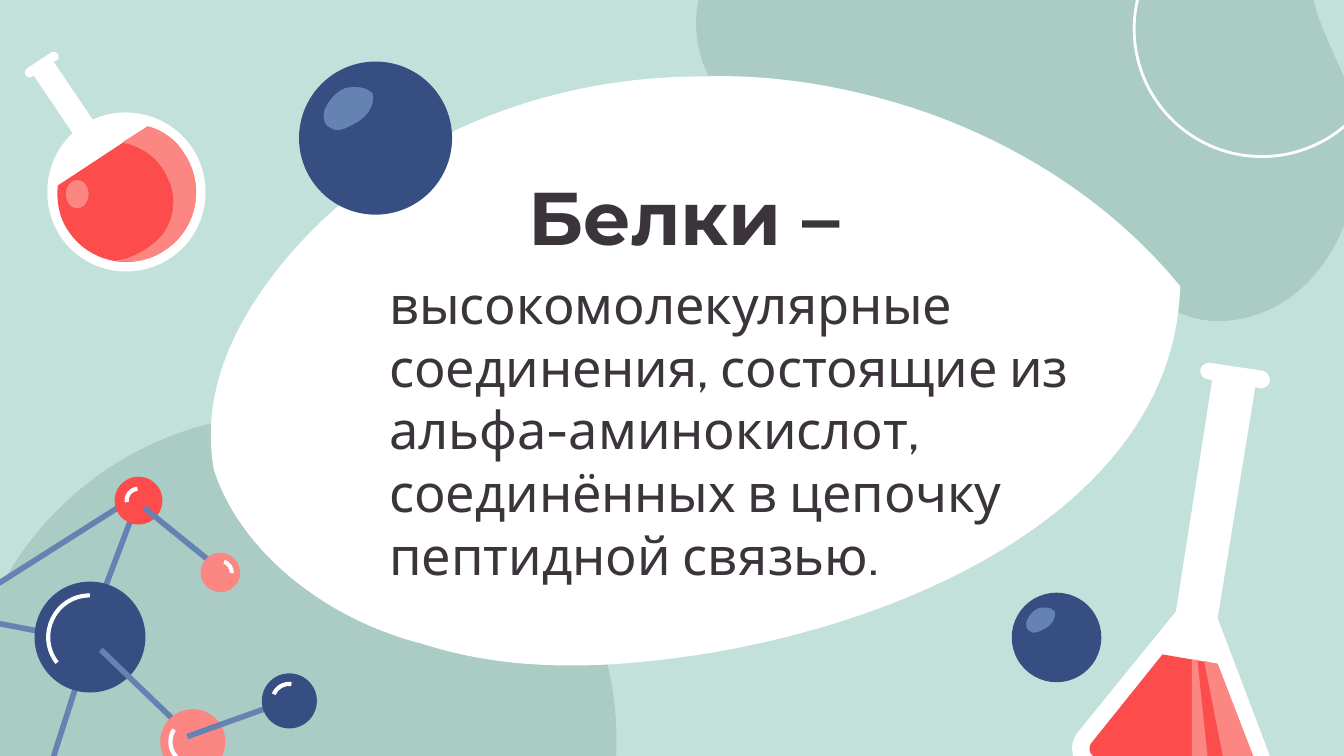
from math import cos, radians, sin, tan

from lxml import etree
from pptx import Presentation
from pptx.dml.color import RGBColor
from pptx.enum.shapes import MSO_CONNECTOR, MSO_SHAPE
from pptx.enum.text import MSO_ANCHOR, PP_ALIGN
from pptx.oxml.ns import qn
from pptx.util import Pt

ELLIPSE = MSO_SHAPE.OVAL
STRAIGHT = MSO_CONNECTOR.STRAIGHT
TOP, BOTTOM = MSO_ANCHOR.TOP, MSO_ANCHOR.BOTTOM
LEFT, CENTER = PP_ALIGN.LEFT, PP_ALIGN.CENTER

MINT, SAGE, WHITE, INK = "C2E1DA", "AACCC4", "FFFFFF", "3B343B"
NAVY, STEEL, RED, PINK = "364E82", "6582B2", "FC4C4C", "FC8782"
GLINT_WIDTH = 2.2

# Each outline is a start point, then lines (2 numbers) and curves (6 numbers).
SAGE_CLOUD = [
    (653, 172), (668, 172, 684, 166, 695.5, 156),
    (716.4, 138.2, 727.2, 109.4, 729.4, 80.6), (731.5, 53.3, 709.2, 25.9, 703.4, -1.4),
    (374.4, -1.4), (371.5, 12.2, 373, 26.6, 378.7, 38.9),
    (385.2, 53.3, 397.4, 64.8, 411.8, 69.8), (424.1, 74.2, 437.8, 74.2, 448.6, 82.1),
    (464.4, 93.6, 466.6, 118.1, 481, 131), (488.9, 138.2, 499, 141.1, 509, 141.1),
    (518.4, 141.1, 527.8, 139, 536.4, 136.8), (547.9, 133.9, 559.4, 131, 571, 131),
    (578.9, 131, 586.8, 132.5, 593.3, 136.1), (604.1, 142.6, 611.3, 153.4, 621.4, 161.3),
    (630.7, 168.5, 641.5, 172, 653, 172),
]
TEXT_CLOUD = [
    (496.8, 60.5), (457.2, 46.8, 416.2, 39.6, 375.8, 41),
    (277.9, 41, 192.2, 85, 144, 150.5), (122.4, 180, 108, 213.8, 114.5, 251.3),
    (126.7, 290.2, 164.9, 324, 209.5, 339.8), (215.3, 342, 220.3, 343.4, 226.1, 344.9),
    (277.2, 361.4, 330.5, 357.8, 380.2, 349.9), (503.3, 329, 629.3, 263.5, 632.2, 153.4),
    (597.6, 110.9, 549.4, 79.2, 496.8, 60.5),
]
CONE_GLASS = [
    (648, 194.4), (645.8, 194.4, 643.7, 195.8, 643, 198),
    (643, 200.9, 644.4, 203, 646.6, 203), (649.4, 203.8), (630, 327.6), (577.4, 392.4),
    (571, 400.3, 575.3, 413.3, 586.1, 414.7), (666.7, 427.7),
    (677.5, 429.1, 686.2, 419, 681.8, 409), (652.3, 331.2), (672.5, 207.4),
    (675.4, 208.1), (677.5, 208.1, 679.7, 206.6, 680.4, 204.5),
    (680.4, 201.6, 679, 199.4, 676.8, 198.7),
]
CONE_RIGHT_EDGE = [
    (668.2, 418.3), (671, 419, 672.5, 417.6, 673.2, 416.9),
    (673.2, 416.2, 674.6, 414.7, 673.9, 411.8), (652.3, 355.7),
]
CONE_LIQUID = [
    (622.8, 350.6), (584.6, 398.2), (583.2, 399.6, 583.9, 401.8, 583.9, 402.5),
    (583.9, 403.2, 585.4, 405.4, 587.5, 406.1), *CONE_RIGHT_EDGE,
]
CONE_STRIPE = [(638.6, 353.5), (638.6, 414), (648, 415.4), (641.5, 353.5)]
CONE_SHADE = [(645.1, 354.2), (657.4, 416.9), *CONE_RIGHT_EDGE]
ROUND_GLASS = [
    (14.4, 36.7), (13, 37.4, 13, 38.9, 13.7, 40.3), (14.4, 41.8, 15.8, 41.8, 17.3, 41),
    (18, 40.3), (38.9, 71.3), (23.8, 85.7, 20.9, 108.7, 32.4, 126.7),
    (45.4, 146.2, 72, 151.2, 91.4, 138.2), (110.9, 125.3, 115.9, 98.6, 103, 79.2),
    (91.4, 61.9, 68.4, 55.4, 49.7, 64.1), (28.8, 33.1), (30.2, 32.4),
    (31.7, 31.7, 31.7, 29.5, 31, 28.8), (30.2, 27.4, 28.8, 27.4, 27.4, 28.1),
]
ROUND_RIGHT_EDGE = [
    (105.8, 122.4, 110.2, 99.4, 98.6, 82.1), (94.3, 74.9, 87.1, 69.8, 79.2, 67.7),
]
ROUND_LIQUID = [
    (31, 99.4), (30.2, 108, 31.7, 116.6, 36.7, 123.8),
    (48.2, 141.1, 71.3, 145.4, 88.6, 133.9), *ROUND_RIGHT_EDGE,
]
ROUND_SHADE = [
    (65.5, 76.3), (76.3, 78.5, 85.7, 85, 90, 95.8),
    (94.3, 103.7, 93.6, 114.5, 89.3, 122.4), (86.4, 127.4, 82.8, 130.3, 78.5, 133.2),
    (73.4, 136.8, 67.7, 139, 61.9, 139.7), (70.6, 141.1, 80.6, 139.7, 88.6, 133.9),
    *ROUND_RIGHT_EDGE,
]
BALL_GLOSS = [
    (37.7, 16.7), (35.1, 16.7, 32.5, 16.7, 29.8, 17.5),
    (23.7, 20.2, 19.3, 25.4, 16.7, 31.6), (15.8, 34.2, 15.8, 36.8, 16.7, 39.5),
    (17.5, 42.1, 21, 43.9, 23.7, 44.7), (25.4, 44.7),
    (28.9, 44.7, 31.6, 43, 35.1, 41.2), (43, 37.7, 50, 29.8, 48.2, 21),
    (45.6, 18.4, 42.1, 16.7, 37.7, 16.7),
]


def rgb(color):
    return RGBColor.from_string(color)


def style(shape, fill=None, line=None):
    shape.shadow.inherit = False
    if fill:
        shape.fill.solid()
        shape.fill.fore_color.rgb = rgb(fill)
    else:
        shape.fill.background()
    if line:
        shape.line.color.rgb = rgb(line)
        shape.line.width = Pt(1.5)
    else:
        shape.line.fill.background()


def oval(slide, cx, cy, width, height, **look):
    box = cx - width / 2, cy - height / 2, width, height
    style(slide.shapes.add_shape(ELLIPSE, *map(Pt, box)), **look)


def outline_shape(slide, outline, fill, left=0, top=0, scale=1):
    points = [(Pt(left + x * scale), Pt(top + y * scale))
              for part in outline for x, y in zip(part[::2], part[1::2])]
    builder = slide.shapes.build_freeform(*points[0])
    builder.add_line_segments(points[1:], close=True)
    shape = builder.convert_to_shape()
    style(shape, fill=fill)
    steps = iter(list(shape._element.iter(qn("a:lnTo"))))
    for part in outline[1:]:
        step = next(steps)
        if len(part) == 6:
            step.tag = qn("a:cubicBezTo")
            for extra in (next(steps), next(steps)):
                step.append(extra[0])
                extra.getparent().remove(extra)


def glossy_ball(slide, cx, cy, diameter):
    oval(slide, cx, cy, diameter, diameter, fill=NAVY)
    corner = cx - diameter / 2, cy - diameter / 2
    outline_shape(slide, BALL_GLOSS, STEEL, *corner, diameter / 100)


def bond(slide, *ends):
    line = slide.shapes.add_connector(STRAIGHT, *map(Pt, ends))
    line.line.color.rgb = rgb(STEEL)
    line.line.width = Pt(3)
    etree.SubElement(line._element.spPr, qn("a:effectLst"))


def arc_points(cx, cy, radius, start, end):
    a, b = radians(start), radians(end)
    pull = 4 / 3 * tan((b - a) / 4)
    units = [(cos(a), sin(a)),
             (cos(a) - pull * sin(a), sin(a) + pull * cos(a)),
             (cos(b) + pull * sin(b), sin(b) - pull * cos(b)),
             (cos(b), sin(b))]
    return [(cx + radius * x, cy + radius * y) for x, y in units]


def atom(slide, cx, cy, diameter, fill, glint, start, end):
    oval(slide, cx, cy, diameter, diameter, fill=fill)
    outer = arc_points(cx, cy, glint + GLINT_WIDTH / 2, start, end)
    inner = arc_points(cx, cy, glint - GLINT_WIDTH / 2, end, start)
    outline_shape(slide, [outer[0], sum(outer[1:], ()), inner[0], sum(inner[1:], ())], WHITE)


def molecule(slide):
    bond(slide, 73.4, 269.6, 49.7, 332.3)
    bond(slide, -19.1, 330.5, 40.7, 342)
    bond(slide, 45.4, 353.2, 15.1, 447.8)
    atom(slide, 48.2, 341.3, 59.4, NAVY, 22.3, 142, 270)
    bond(slide, 54, 348.1, 101.9, 394.2)
    atom(slide, 103.3, 397.4, 34.9, PINK, 12, 90, 213)
    bond(slide, 72, 266.4, -24.5, 327.6)
    atom(slide, 74.2, 268.2, 25.6, RED, 6.4, 172, 265)
    bond(slide, 77.4, 272.2, 117.7, 304.9)
    bond(slide, 148.7, 377.3, 100.4, 394.6)
    atom(slide, 118.1, 306.7, 21.2, PINK, 6.1, 289, 363)
    atom(slide, 155, 375.5, 29.5, NAVY, 9.1, 203, 277)


def text(slide, words, box, font, size, bold=False, align=LEFT, anchor=TOP):
    frame = slide.shapes.add_textbox(*map(Pt, box)).text_frame
    frame.word_wrap = True
    frame.vertical_anchor = anchor
    frame.margin_left = frame.margin_right = Pt(7.2)
    frame.margin_top = frame.margin_bottom = Pt(7.2)
    paragraph = frame.paragraphs[0]
    paragraph.alignment = align
    run = paragraph.add_run()
    run.text = words
    run.font.name, run.font.size, run.font.bold = font, Pt(size), bold
    run.font.color.rgb = rgb(INK)


def main():
    deck = Presentation()
    deck.slide_width, deck.slide_height = Pt(720), Pt(405)
    slide = deck.slides.add_slide(deck.slide_layouts[6])
    slide.background.fill.solid()
    slide.background.fill.fore_color.rgb = rgb(MINT)

    for outline, fill in (
        (SAGE_CLOUD, SAGE),
        (CONE_GLASS, WHITE), (CONE_LIQUID, RED), (CONE_STRIPE, PINK), (CONE_SHADE, PINK),
        (ROUND_GLASS, WHITE), (ROUND_LIQUID, RED), (ROUND_SHADE, PINK),
    ):
        outline_shape(slide, outline, fill)
    oval(slide, 41.4, 104, 12.2, 15.1, fill=PINK)
    oval(slide, 676, 15.5, 136.8, 136.8, line=WHITE)
    glossy_ball(slide, 566, 341.5, 48)
    oval(slide, 155, 397, 350.6, 350.6, fill=SAGE)
    outline_shape(slide, TEXT_CLOUD, WHITE)

    text(slide, "высокомолекулярные соединения, состоящие из альфа-аминокислот, "
         "соединённых в цепочку пептидной связью.",
         (201.4, 138.6, 394.6, 141.1), font="Cabin", size=28)
    text(slide, "Белки –", (193.5, 83.5, 346.3, 63.4), font="Montserrat", size=40,
         bold=True, align=CENTER, anchor=BOTTOM)
    glossy_ball(slide, 201.2, 74, 82)
    molecule(slide)
    deck.save("out.pptx")


if __name__ == "__main__":
    main()
